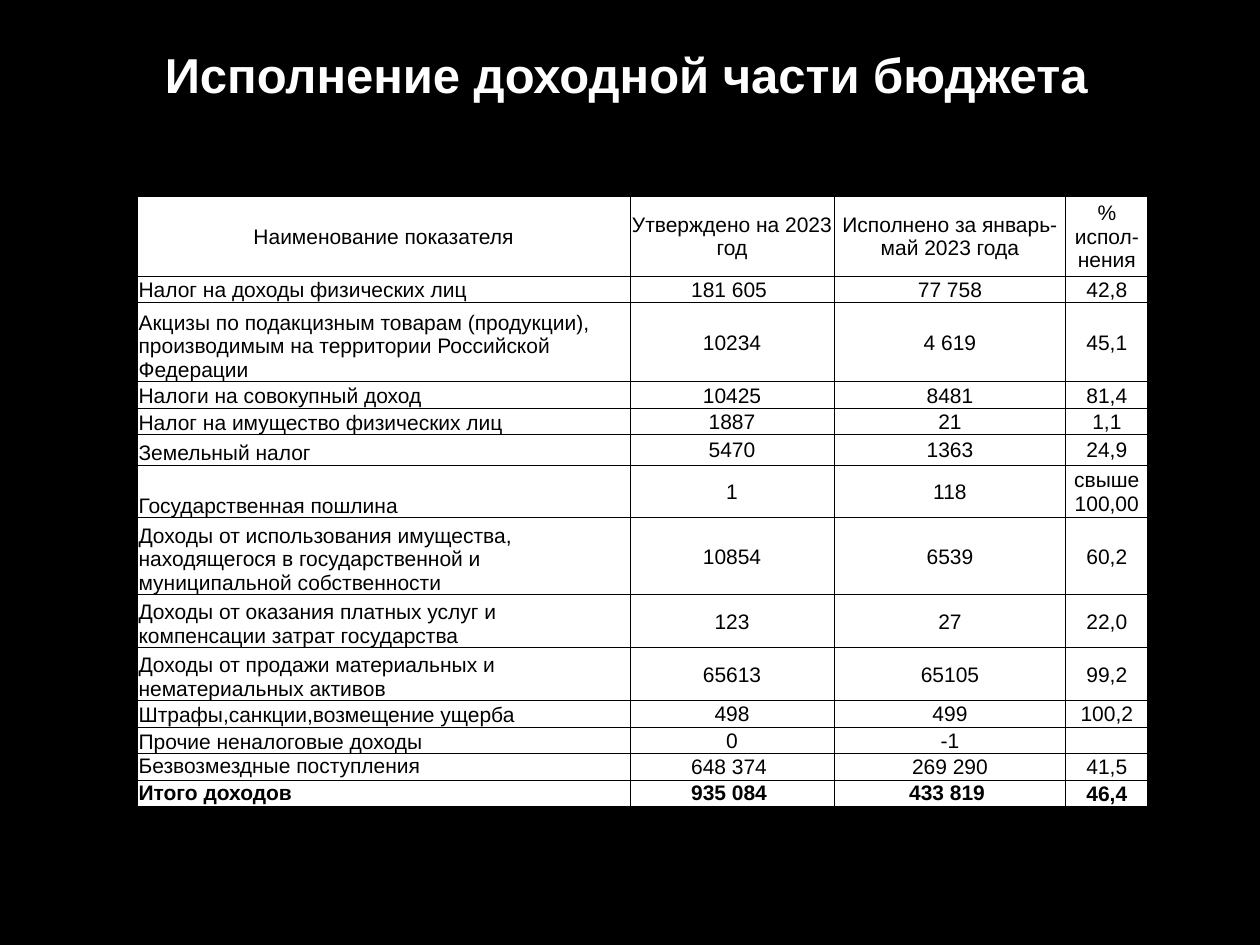
from dataclasses import dataclass

from lxml.etree import SubElement
from pptx import Presentation
from pptx.dml.color import RGBColor
from pptx.enum.text import MSO_ANCHOR, PP_ALIGN
from pptx.oxml.ns import qn
from pptx.util import Inches, Pt

BLACK = RGBColor(0, 0, 0)
WHITE = RGBColor(255, 255, 255)
FONT = "Arial"
TEXT_SIZE = Pt(12)
LINE_WIDTH = Pt(0.5)
INSET = Inches(0.01)
COLUMN_WIDTHS = (3.91, 1.62, 1.84, 0.65)
LINE = 0.21


@dataclass(frozen=True)
class BudgetRow:
    values: tuple[str, str, str, str]
    height: float = LINE
    name_align: PP_ALIGN = PP_ALIGN.LEFT
    name_anchor: MSO_ANCHOR = MSO_ANCHOR.BOTTOM
    amount_anchor: MSO_ANCHOR = MSO_ANCHOR.MIDDLE
    bold: bool = False


ROWS = (
    BudgetRow(("Наименование показателя", "Утверждено на 2023 год",
               "Исполнено за январь-май 2023 года", "% испол-нения"),
              3 * LINE, PP_ALIGN.CENTER, MSO_ANCHOR.MIDDLE),
    BudgetRow(("Налог на доходы физических лиц", "181 605 ", "77 758", "42,8")),
    BudgetRow(("Акцизы по подакцизным товарам (продукции), производимым на "
               "территории Российской Федерации", "10234", "4 619", "45,1"), 3 * LINE),
    BudgetRow(("Налоги на совокупный доход", "10425", "8481", "81,4")),
    BudgetRow(("Налог на имущество физических лиц", "1887", "21", "1,1")),
    BudgetRow(("Земельный налог", "5470", "1363", "24,9"), 0.24),
    BudgetRow(("Государственная пошлина", "1", "118", "свыше 100,00"), 2 * LINE),
    BudgetRow(("Доходы от использования имущества, находящегося в государственной "
               "и муниципальной собственности", "10854", "6539", "60,2"), 0.46),
    BudgetRow(("Доходы от оказания платных услуг и компенсации затрат государства",
               "123", "27", "22,0"), 2 * LINE),
    BudgetRow(("Доходы от продажи материальных и нематериальных активов",
               "65613", "65105", "99,2"), 2 * LINE),
    BudgetRow(("Штрафы,санкции,возмещение ущерба", "498", "499", "100,2")),
    BudgetRow(("Прочие неналоговые доходы", "0", "-1", "")),
    BudgetRow(("Безвозмездные поступления", "648 374 ", "269 290", "41,5"),
              name_align=PP_ALIGN.JUSTIFY, name_anchor=MSO_ANCHOR.TOP),
    BudgetRow(("Итого доходов", "935 084 ", "433 819 ", "46,4"),
              name_align=PP_ALIGN.JUSTIFY, name_anchor=MSO_ANCHOR.TOP,
              amount_anchor=MSO_ANCHOR.TOP, bold=True),
)


def style_paragraph(para, size: int, color: RGBColor, bold: bool, align: PP_ALIGN) -> None:
    para.alignment = align
    para.font.name = FONT
    para.font.size = size
    para.font.bold = bold
    para.font.color.rgb = color


def add_borders(cell) -> None:
    properties = cell._tc.get_or_add_tcPr()
    for index, side in enumerate(("lnL", "lnR", "lnT", "lnB")):
        line = properties.makeelement(qn(f"a:{side}"), {"w": str(LINE_WIDTH)})
        fill = SubElement(line, qn("a:solidFill"))
        SubElement(fill, qn("a:srgbClr"), val=str(BLACK))
        properties.insert(index, line)


def fill_cell(cell, text: str, align: PP_ALIGN, anchor: MSO_ANCHOR, bold: bool) -> None:
    cell.fill.solid()
    cell.fill.fore_color.rgb = WHITE
    cell.margin_left = cell.margin_top = cell.margin_right = INSET
    cell.margin_bottom = 0
    cell.vertical_anchor = anchor
    para = cell.text_frame.paragraphs[0]
    if text:
        para.text = text
    else:
        SubElement(para._p, qn("a:endParaRPr"), sz=str(int(TEXT_SIZE.pt * 100)))
    style_paragraph(para, TEXT_SIZE, BLACK, bold, align)
    add_borders(cell)


def add_title(page, text: str) -> None:
    box = page.shapes.add_textbox(Inches(0.47), Inches(0.23), Inches(9), Inches(0.72))
    box.text_frame.word_wrap = True
    box.text_frame.vertical_anchor = MSO_ANCHOR.MIDDLE
    para = box.text_frame.paragraphs[0]
    para.text = text
    style_paragraph(para, Pt(28), WHITE, True, PP_ALIGN.CENTER)


def add_budget_table(page, rows: tuple[BudgetRow, ...]) -> None:
    table = page.shapes.add_table(
        len(rows), len(COLUMN_WIDTHS), Inches(1.09), Inches(1.56),
        Inches(sum(COLUMN_WIDTHS)), Inches(sum(row.height for row in rows))).table
    table.first_row = table.horz_banding = False
    for column, width in zip(table.columns, COLUMN_WIDTHS):
        column.width = Inches(width)
    for index, row in enumerate(rows):
        table.rows[index].height = Inches(row.height)
        aligns = (row.name_align, *[PP_ALIGN.CENTER] * 3)
        anchors = (row.name_anchor, row.amount_anchor, row.amount_anchor, MSO_ANCHOR.MIDDLE)
        for cell, text, align, anchor in zip(table.rows[index].cells, row.values, aligns, anchors):
            fill_cell(cell, text, align, anchor, row.bold)


def main() -> None:
    deck = Presentation()
    deck.slide_width, deck.slide_height = Inches(10), Inches(7.5)
    page = deck.slides.add_slide(deck.slide_layouts[6])
    page.background.fill.solid()
    page.background.fill.fore_color.rgb = BLACK
    add_title(page, "Исполнение доходной части бюджета")
    add_budget_table(page, ROWS)
    deck.save("out.pptx")


if __name__ == "__main__":
    main()
